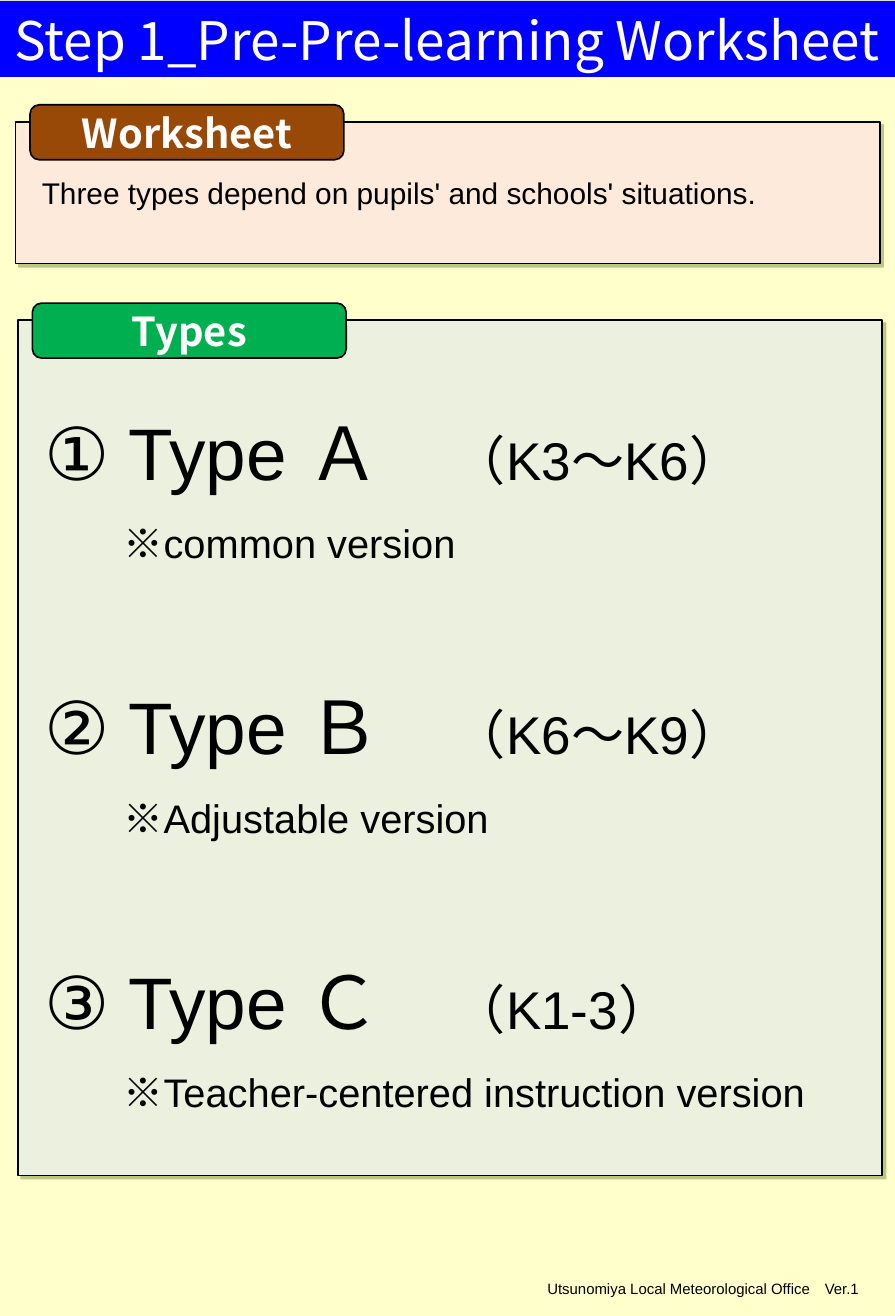
from dataclasses import dataclass

from lxml.etree import SubElement
from pptx import Presentation
from pptx.dml.color import RGBColor
from pptx.enum.shapes import MSO_SHAPE
from pptx.enum.text import MSO_ANCHOR, PP_ALIGN
from pptx.oxml.ns import qn
from pptx.util import Cm, Pt

LATIN = "Arial"
HEADING = "Noto Sans CJK JP"
BLACK, WHITE = "000000", "FFFFFF"


@dataclass
class Box:
    left: float
    top: float
    width: float
    height: float

    def emu(self) -> list:
        return [Cm(v) for v in (self.left, self.top, self.width, self.height)]


@dataclass
class Panel:
    title: str
    box: Box
    fill: str
    tab_fill: str


@dataclass
class LessonType:
    name: str
    grades: str
    note: str


PANELS = [
    Panel("Worksheet", Box(0.33, 2.59, 18.4, 3.02), "FDEADA", "984807"),
    Panel("Types", Box(0.38, 6.81, 18.4, 18.2), "EBF1DE", "00B050"),
]
TYPES = [
    LessonType("① Type Ａ　", "（K3～K6）", "　※common version"),
    LessonType("② Type Ｂ　", "（K6～K9）", "　※Adjustable version"),
    LessonType("③ Type Ｃ　", "（K1-3）", "　※Teacher-centered instruction version"),
]


def rgb(color: str) -> RGBColor:
    return RGBColor.from_string(color)


def add_block(s, kind, box: Box, fill: str, outlined: bool = True):
    sp = s.shapes.add_shape(kind, *box.emu())
    sp.shadow.inherit = False
    sp.fill.solid()
    sp.fill.fore_color.rgb = rgb(fill)
    if outlined:
        sp.line.color.rgb = rgb(BLACK)
        sp.line.width = Pt(1)
    else:
        sp.line.fill.background()
    return sp


def add_shadow(sp, color: str) -> None:
    effects = sp._element.spPr.find(qn("a:effectLst"))
    shadow = SubElement(effects, qn("a:outerShdw"), dist=str(Pt(2.8)),
                        dir="2700000", algn="tl", rotWithShape="0")
    clr = SubElement(shadow, qn("a:srgbClr"), val=color)
    SubElement(clr, qn("a:alpha"), val="50000")


def set_heading(sp, text: str, size: int, bold: bool) -> None:
    tf = sp.text_frame
    tf.margin_top = tf.margin_bottom = 0
    tf.margin_left = tf.margin_right = Cm(0.2)
    tf.vertical_anchor = MSO_ANCHOR.MIDDLE
    p = tf.paragraphs[0]
    p.text = text
    p.alignment = PP_ALIGN.CENTER
    style(p, HEADING, size, WHITE)
    p.font.bold = bold


def style(p, name: str, size: int, color: str = BLACK) -> None:
    p.font.name = name
    p.font.size = Pt(size)
    p.font.color.rgb = rgb(color)
    for r in p.runs:
        SubElement(r.font._element, qn("a:ea"), typeface=name)


def add_text_frame(s, box: Box):
    tf = s.shapes.add_textbox(*box.emu()).text_frame
    tf.word_wrap = True
    return tf


def add_line(s, box: Box, text: str, size: int) -> None:
    p = add_text_frame(s, box).paragraphs[0]
    p.text = text
    style(p, LATIN, size)


def add_panel(s, panel: Panel) -> None:
    add_shadow(add_block(s, MSO_SHAPE.RECTANGLE, panel.box, panel.fill), "77933C")
    tab = Box(panel.box.left + 0.31, panel.box.top - 0.36, 6.68, 1.17)
    sp = add_block(s, MSO_SHAPE.ROUNDED_RECTANGLE, tab, panel.tab_fill)
    set_heading(sp, panel.title, 24, True)


def add_types(s, box: Box) -> None:
    tf = add_text_frame(s, box)
    for i, item in enumerate(TYPES):
        p = tf.add_paragraph() if i else tf.paragraphs[0]
        p.line_spacing = 1.5
        p.add_run().text = item.name
        r = p.add_run()
        r.text = item.grades
        r.font.size = Pt(32)
        style(p, LATIN, 44)

        p = tf.add_paragraph()
        p.text = item.note
        p.line_spacing = 1.5
        p.space_after = Pt(43)
        p._p.get_or_add_pPr().set("marL", str(Cm(0.85)))
        style(p, LATIN, 24)


def main() -> None:
    prs = Presentation()
    prs.slide_width, prs.slide_height = Cm(19.05), Cm(28)
    s = prs.slides.add_slide(prs.slide_layouts[6])
    s.background.fill.solid()
    s.background.fill.fore_color.rgb = rgb("FFFFCC")

    # Title bar
    bar = add_block(s, MSO_SHAPE.RECTANGLE, Box(0, 0.02, 19.05, 1.62), "0000FF", False)
    set_heading(bar, "Step 1_Pre-Pre-learning Worksheet", 32, False)

    # Panels with their tabs
    for panel in PANELS:
        add_panel(s, panel)

    # Panel contents
    add_line(s, Box(0.64, 3.6, 17.88, 1.8),
             "Three types depend on pupils' and schools' situations.", 18)
    add_types(s, Box(0.69, 7.62, 18.21, 16.41))

    # Footer
    add_line(s, Box(11.4, 27.1, 7.6, 0.64),
             "Utsunomiya Local Meteorological Office　Ver.1", 9)

    prs.save("out.pptx")


if __name__ == "__main__":
    main()
